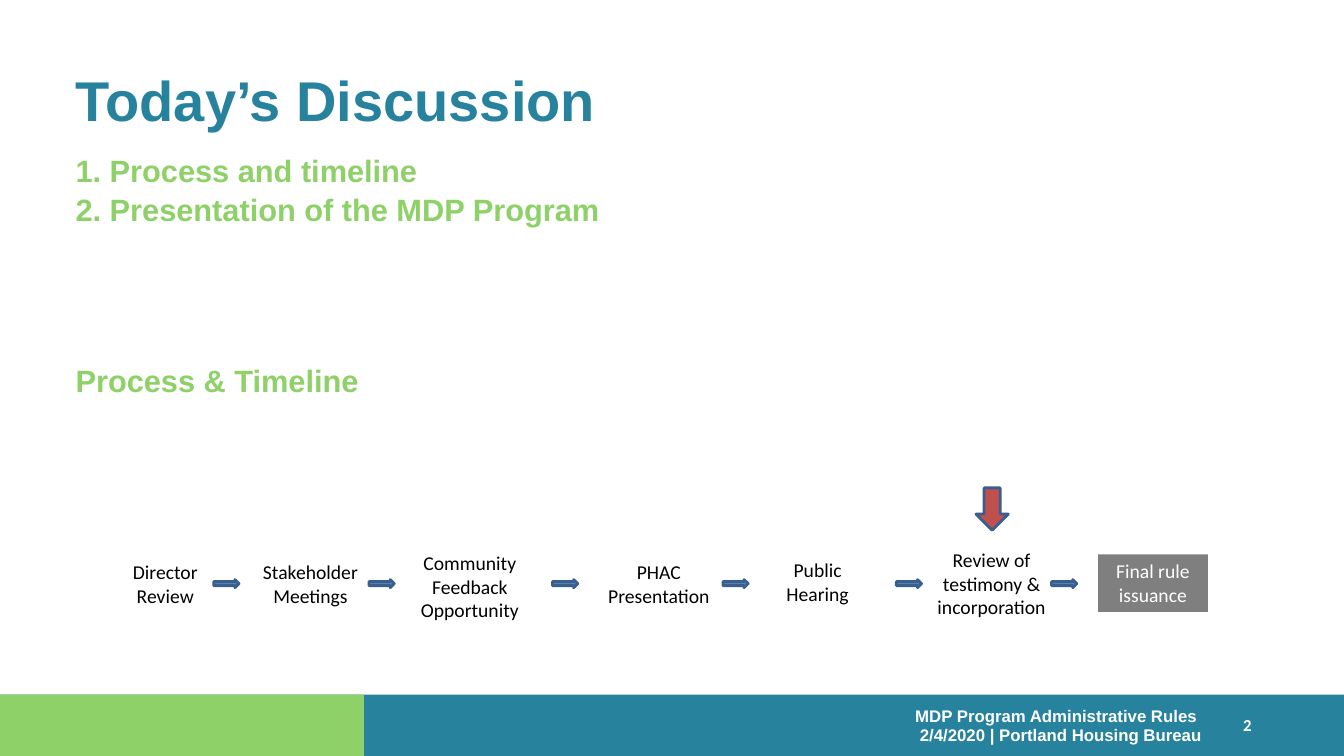
from lxml import etree
from pptx import Presentation
from pptx.dml.color import RGBColor
from pptx.enum.shapes import MSO_SHAPE
from pptx.enum.text import MSO_ANCHOR, PP_ALIGN
from pptx.oxml.ns import qn
from pptx.util import Inches, Pt

RECTANGLE = MSO_SHAPE.RECTANGLE
RIGHT_ARROW = MSO_SHAPE.RIGHT_ARROW
TOP = MSO_ANCHOR.TOP
LEFT, CENTER, RIGHT = PP_ALIGN.LEFT, PP_ALIGN.CENTER, PP_ALIGN.RIGHT

TEAL = RGBColor(0x27, 0x82, 0x9D)
GREEN = RGBColor(0x8F, 0xD1, 0x69)
BLUE = RGBColor(0x4F, 0x81, 0xBD)
DARK_BLUE = RGBColor(0x3A, 0x5F, 0x8C)
RED = RGBColor(0xC0, 0x50, 0x4D)
BLACK = RGBColor(0, 0, 0)
WHITE = RGBColor(0xFF, 0xFF, 0xFF)

SLIDE_WIDTH, SLIDE_HEIGHT = 13.33, 7.5
FOOTER_TOP, FOOTER_HEIGHT = 6.89, 0.61
MARGIN = 0.75
ARROW_WIDTH, ARROW_HEIGHT = 0.25, 0.08

STEPS = [
    ("Director Review", 1.21, 5.51, 0.86, 0.57),
    ("Stakeholder Meetings", 2.5, 5.51, 1.16, 0.57),
    ("Community Feedback Opportunity", 4.02, 5.42, 1.28, 0.81),
    ("PHAC Presentation", 5.91, 5.51, 1.25, 0.57),
    ("Public Hearing", 7.51, 5.49, 1.2, 0.57),
    ("Review of testimony & incorporation", 9.16, 5.39, 1.35, 0.81),
]
ARROW_LEFTS = [2.12, 3.66, 5.48, 7.17, 8.89, 10.43]

HEADING = {"size": Pt(22), "name": "Arial", "bold": True, "color": GREEN}
TITLE = {**HEADING, "size": Pt(40), "color": TEAL}
FOOTER = {**HEADING, "size": Pt(12), "color": WHITE}
PAGE_NUMBER = {**FOOTER, "name": "Calibri"}
STEP = {"size": Pt(14), "name": "Calibri", "bold": False, "color": BLACK}
FINAL_STEP = {**STEP, "color": WHITE}

FLUSH = {"margin_left": 0, "margin_top": Inches(0.01), "margin_right": 0, "margin_bottom": 0}
PADDED = {
    "margin_left": Inches(0.1), "margin_top": Inches(0.05),
    "margin_right": Inches(0.1), "margin_bottom": Inches(0.05),
}
FLUSH_LEFT = {"alignment": LEFT, "space_before": Pt(1)}
FOOTER_LINES = {"alignment": RIGHT, "line_spacing": Pt(14.2)}
CENTERED = {"alignment": CENTER}


def apply(target, values):
    for attribute, value in values.items():
        setattr(target, attribute, value)


class SlideBuilder:
    def __init__(self, slide):
        self.shapes = slide.shapes

    def fill_text(self, shape, lines, font, margins, layout):
        frame = shape.text_frame
        apply(frame, {"word_wrap": True, "vertical_anchor": TOP, **margins})
        for index, line in enumerate(lines):
            paragraph = frame.add_paragraph() if index else frame.paragraphs[0]
            apply(paragraph, layout)
            run = paragraph.add_run()
            run.text = line
            apply(run.font, {key: font[key] for key in ("size", "name", "bold")})
            run.font.color.rgb = font["color"]

    def text(self, lines, box, font, margins=FLUSH, layout=FLUSH_LEFT):
        shape = self.shapes.add_textbox(*map(Inches, box))
        self.fill_text(shape, lines, font, margins, layout)

    def block(self, box, color, kind=RECTANGLE):
        shape = self.shapes.add_shape(kind, *map(Inches, box))
        shape.shadow.inherit = False
        shape.fill.solid()
        shape.fill.fore_color.rgb = color
        shape.line.fill.background()
        return shape

    def arrow(self, box, color, rotation=0):
        shape = self.block(box, color, RIGHT_ARROW)
        shape.rotation = rotation
        shape.line.color.rgb = DARK_BLUE
        shape.line.width = Pt(2)

    def translucent_box(self, label, box, font):
        shape = self.block(box, BLACK)
        color = shape.element.spPr.find(qn("a:solidFill"))[0]
        etree.SubElement(color, qn("a:alpha")).set("val", "50000")
        self.fill_text(shape, [label], font, PADDED, CENTERED)


def main():
    presentation = Presentation()
    presentation.slide_width = Inches(SLIDE_WIDTH)
    presentation.slide_height = Inches(SLIDE_HEIGHT)
    builder = SlideBuilder(presentation.slides.add_slide(presentation.slide_layouts[6]))

    for width, color in ((SLIDE_WIDTH, TEAL), (3.61, GREEN)):
        builder.block((0, FOOTER_TOP, width, FOOTER_HEIGHT), color)

    builder.text(["Today’s Discussion"], (MARGIN, 0.64, 7.51, 0.69), TITLE)
    agenda = ["1. Process and timeline", "2. Presentation of the MDP Program"]
    builder.text(agenda, (MARGIN, 1.5, 11.53, 0.8), HEADING)
    builder.text(["Process & Timeline"], (MARGIN, 3.58, 11.53, 0.4), HEADING)

    for label, *box in STEPS:
        builder.text([label], box, STEP, PADDED, CENTERED)
    for left in ARROW_LEFTS:
        builder.arrow((left, 5.75, ARROW_WIDTH, ARROW_HEIGHT), BLUE)
    builder.translucent_box("Final rule issuance", (10.89, 5.5, 1.09, 0.57), FINAL_STEP)
    builder.arrow((9.63, 4.89, 0.42, 0.32), RED, 90)

    footer = ["MDP Program Administrative Rules ", "2/4/2020 | Portland Housing Bureau"]
    builder.text(footer, (5.25, 7, 6.67, 0.39), FOOTER, {**FLUSH, "margin_top": 0}, FOOTER_LINES)
    builder.text(["2"], (12.33, 7.08, 0.2, 0.21), PAGE_NUMBER)

    presentation.save("out.pptx")


if __name__ == "__main__":
    main()
